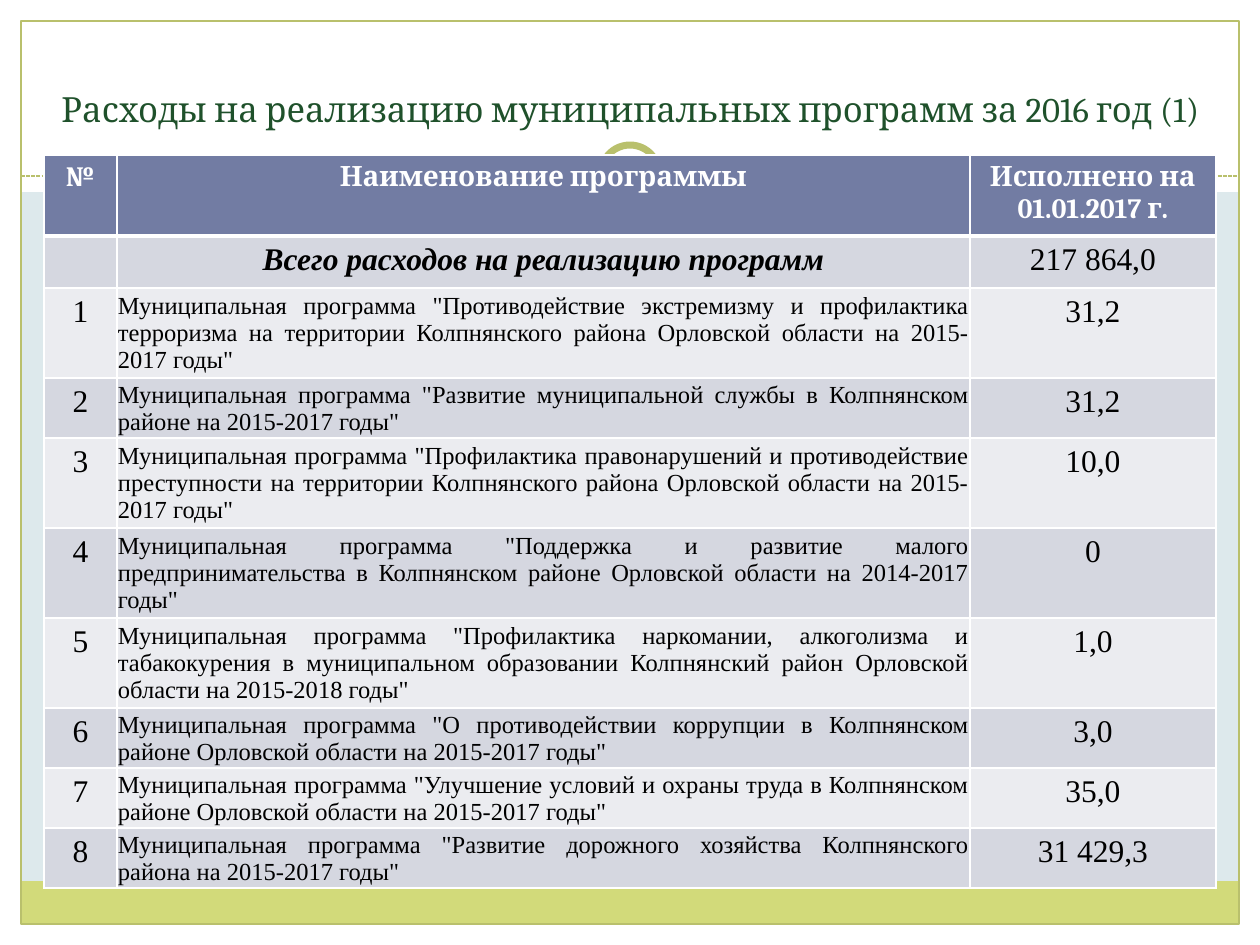
from dataclasses import dataclass

from lxml.etree import SubElement
from pptx import Presentation
from pptx.dml.color import RGBColor
from pptx.enum.dml import MSO_LINE
from pptx.enum.shapes import MSO_CONNECTOR, MSO_SHAPE
from pptx.enum.text import MSO_ANCHOR, MSO_AUTO_SIZE, PP_ALIGN
from pptx.oxml.ns import qn
from pptx.util import Emu, Pt

EMU_PER_PX = 914400 / 126
SLIDE_WIDTH, SLIDE_HEIGHT = 1260, 945


@dataclass(frozen=True)
class Theme:
    background: str = "DDE9EC"
    white: str = "FFFFFF"
    black: str = "000000"
    band: str = "D2DA7A"
    accent: str = "B9C06C"
    title: str = "1F512B"
    header: str = "727CA3"
    dark_row: str = "D5D7E0"
    light_row: str = "EBECF0"
    heading_font: str = "Cambria"
    body_font: str = "Times New Roman"
    title_size: float = 19.8
    header_size: int = 16
    value_size: int = 18
    program_size: int = 14


THEME = Theme()

HEADERS = ("№", "Наименование программы", "Исполнено на 01.01.2017 г.")
TOTAL = ("Всего расходов на реализацию программ", "217 864,0")
# Program name, amount spent, lines the name takes
PROGRAMS = (
    ("Противодействие экстремизму и профилактика терроризма на территории "
     "Колпнянского района Орловской области на 2015-2017 годы", "31,2", 3),
    ("Развитие муниципальной службы в Колпнянском районе на 2015-2017 годы", "31,2", 2),
    ("Профилактика правонарушений и противодействие преступности на территории "
     "Колпнянского района Орловской области на 2015-2017 годы", "10,0", 3),
    ("Поддержка и развитие малого предпринимательства в Колпнянском районе "
     "Орловской области на 2014-2017 годы", "0", 3),
    ("Профилактика наркомании, алкоголизма и табакокурения в муниципальном "
     "образовании Колпнянский район Орловской области на 2015-2018 годы", "1,0", 3),
    ("О противодействии коррупции в Колпнянском районе Орловской области "
     "на 2015-2017 годы", "3,0", 2),
    ("Улучшение условий и охраны труда в Колпнянском районе Орловской области "
     "на 2015-2017 годы", "35,0", 2),
    ("Развитие дорожного хозяйства Колпнянского района на 2015-2017 годы", "31 429,3", 2),
)
COLUMN_WIDTHS = (73, 853, 246)
HEADER_HEIGHT, TOTAL_HEIGHT, LINE_HEIGHT = 81, 52, 30


def px(length):
    return Emu(round(length * EMU_PER_PX))


def rgb(color):
    return RGBColor.from_string(color)


def add_shape(slide, kind, box, fill=None, line=None, line_width=0.75):
    shape = slide.shapes.add_shape(kind, *map(px, box))
    shape.shadow.inherit = False
    if fill:
        shape.fill.solid()
        shape.fill.fore_color.rgb = rgb(fill)
    else:
        shape.fill.background()
    if line:
        shape.line.color.rgb = rgb(line)
        shape.line.width = Pt(line_width)
    else:
        shape.line.fill.background()


def add_dashed_line(slide, left, right, y):
    connector = slide.shapes.add_connector(
        MSO_CONNECTOR.STRAIGHT, px(left), px(y), px(right), px(y))
    connector.line.color.rgb = rgb(THEME.accent)
    connector.line.width = Pt(0.75)
    connector.line.dash_style = MSO_LINE.SQUARE_DOT
    SubElement(connector.element.spPr, qn("a:effectLst"))


def add_run(paragraph, text, font_name, size, color, bold=False, italic=False):
    run = paragraph.add_run()
    run.text = text
    font = run.font
    font.name, font.size, font.bold, font.italic = font_name, Pt(size), bold, italic
    font.color.rgb = rgb(color)


def add_frame(slide):
    margin = 21
    # White margins around the coloured page
    for box in ((0, SLIDE_HEIGHT - margin, SLIDE_WIDTH, margin),
                (0, 0, SLIDE_WIDTH, 192),
                (0, 0, margin, SLIDE_HEIGHT),
                (SLIDE_WIDTH - margin, 0, margin, SLIDE_HEIGHT)):
        add_shape(slide, MSO_SHAPE.RECTANGLE, box, THEME.white)
    # Bottom band, outline and divider
    inner_width = SLIDE_WIDTH - 2 * margin
    add_shape(slide, MSO_SHAPE.RECTANGLE, (margin, 881, inner_width, 43), THEME.band)
    add_shape(slide, MSO_SHAPE.RECTANGLE,
              (margin, margin, inner_width, SLIDE_HEIGHT - 2 * margin), line=THEME.accent)
    add_dashed_line(slide, margin, SLIDE_WIDTH - margin, 176)
    # Ring on the divider
    add_shape(slide, MSO_SHAPE.OVAL, (588, 132, 84, 84), THEME.white)
    add_shape(slide, MSO_SHAPE.OVAL, (601, 145, 58, 58), THEME.white, THEME.accent, 4)


def set_title(slide, text):
    title = slide.shapes.title
    title.left, title.top, title.width, title.height = map(px, (42, 31, 1176, 105))
    # Bring the title in front of the frame
    title.element.getparent().append(title.element)
    frame = title.text_frame
    frame.auto_size = MSO_AUTO_SIZE.NONE
    frame.word_wrap = True
    frame.vertical_anchor = MSO_ANCHOR.BOTTOM
    paragraph = frame.paragraphs[0]
    paragraph.alignment = PP_ALIGN.CENTER
    add_run(paragraph, text, THEME.heading_font, THEME.title_size, THEME.title)


def set_borders(cell, bottom_width):
    properties = cell._tc.get_or_add_tcPr()
    widths = {"a:lnL": 1, "a:lnR": 1, "a:lnT": 1, "a:lnB": bottom_width}
    for position, (tag, width) in enumerate(widths.items()):
        border = properties.makeelement(qn(tag), {"w": str(Pt(width))})
        fill = SubElement(border, qn("a:solidFill"))
        SubElement(fill, qn("a:srgbClr"), val=THEME.white)
        properties.insert(position, border)


def fill_cell(cell, text, fill, size=THEME.value_size, font=THEME.body_font,
              color=THEME.black, align=PP_ALIGN.CENTER, bold=False, italic=False,
              bottom_width=1):
    cell.fill.solid()
    cell.fill.fore_color.rgb = rgb(fill)
    set_borders(cell, bottom_width)
    paragraph = cell.text_frame.paragraphs[0]
    paragraph.alignment = align
    if text:
        add_run(paragraph, text, font, size, color, bold, italic)


def fill_program_name(cell, name, fill):
    fill_cell(cell, f'Муниципальная программа "{name}"', fill,
              THEME.program_size, align=PP_ALIGN.JUSTIFY)
    cell.vertical_anchor = MSO_ANCHOR.MIDDLE
    cell.margin_left = cell.margin_right = cell.margin_top = px(1)
    cell.margin_bottom = 0


def add_program_table(slide):
    heights = [HEADER_HEIGHT, TOTAL_HEIGHT]
    heights += [lines * LINE_HEIGHT for _, _, lines in PROGRAMS]
    table = slide.shapes.add_table(
        len(heights), len(COLUMN_WIDTHS), px(44), px(155),
        px(sum(COLUMN_WIDTHS)), px(sum(heights))).table
    table.first_row = table.horz_banding = False
    for column, width in zip(table.columns, COLUMN_WIDTHS):
        column.width = px(width)
    for row, height in zip(table.rows, heights):
        row.height = px(height)

    # Header and total rows
    for column, text in enumerate(HEADERS):
        fill_cell(table.cell(0, column), text, THEME.header, THEME.header_size,
                  THEME.heading_font, THEME.white, bold=True, bottom_width=3)
    fill_cell(table.cell(1, 0), "", THEME.dark_row)
    fill_cell(table.cell(1, 1), TOTAL[0], THEME.dark_row, bold=True, italic=True)
    fill_cell(table.cell(1, 2), TOTAL[1], THEME.dark_row)

    # Numbered programs in alternating bands
    for number, (name, amount, _) in enumerate(PROGRAMS, start=1):
        fill = THEME.light_row if number % 2 else THEME.dark_row
        row = number + 1
        fill_cell(table.cell(row, 0), str(number), fill)
        fill_program_name(table.cell(row, 1), name, fill)
        fill_cell(table.cell(row, 2), amount, fill)


def main():
    presentation = Presentation()
    presentation.slide_width = px(SLIDE_WIDTH)
    presentation.slide_height = px(SLIDE_HEIGHT)
    slide = presentation.slides.add_slide(presentation.slide_layouts[5])
    slide.background.fill.solid()
    slide.background.fill.fore_color.rgb = rgb(THEME.background)
    add_frame(slide)
    set_title(slide, "Расходы на реализацию муниципальных программ за 2016 год (1)")
    add_program_table(slide)
    presentation.save("out.pptx")


if __name__ == "__main__":
    main()
